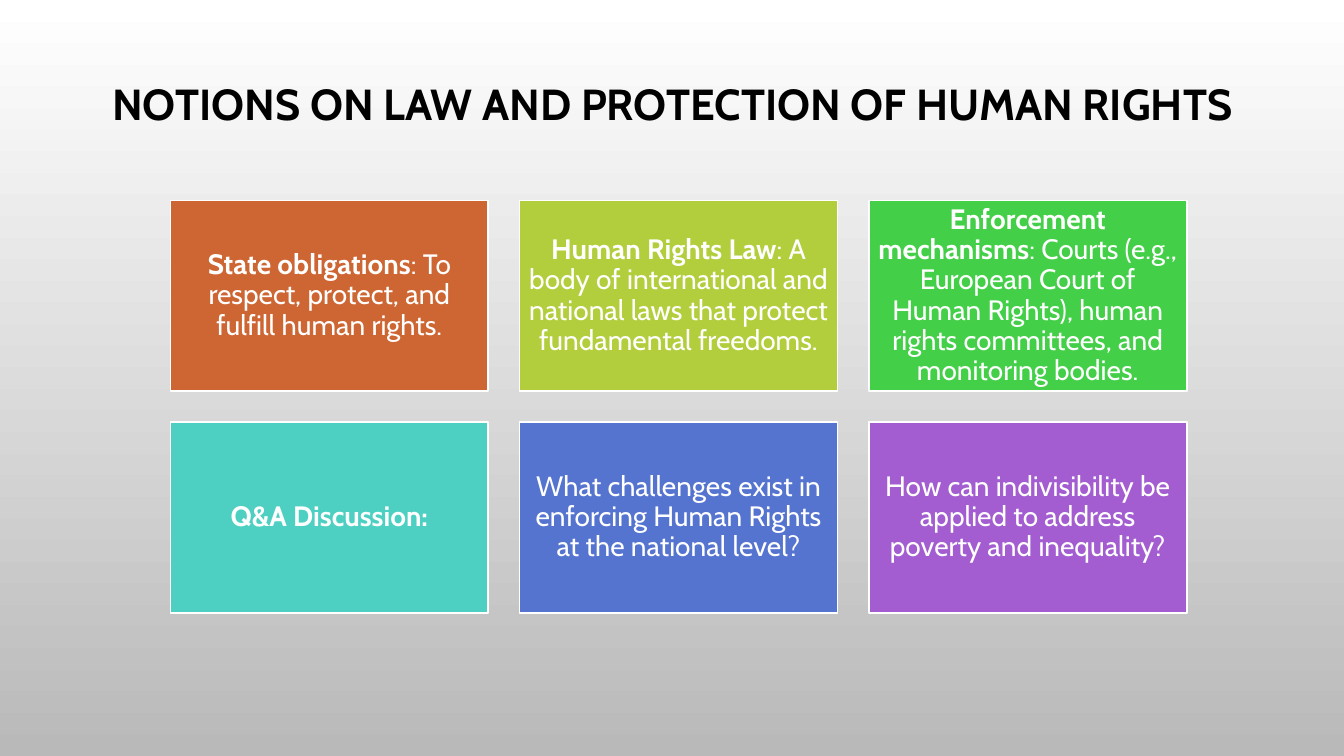
import pptx
import pptx.dml.color
import pptx.enum.shapes
import pptx.enum.text
import pptx.util

Inches = pptx.util.Inches
Pt = pptx.util.Pt

FONT = "Cabin"
COLORS = {
    "black": "000000",
    "white": "FFFFFF",
    "grey": "B9B9B9",
    "orange": "CE6633",
    "lime": "B3CE3C",
    "green": "44CF49",
    "teal": "4DD0C2",
    "blue": "5574D0",
    "purple": "A35DD1",
}
TITLE = "NOTIONS ON LAW AND PROTECTION OF HUMAN RIGHTS"
# Each card: colour, bold lead, plain text
CARDS = [
    ("orange", "State obligations", ": To respect, protect, and fulfill human rights."),
    ("lime", "Human Rights Law",
     ": A body of international and national laws that protect fundamental freedoms."),
    ("green", "Enforcement mechanisms",
     ": Courts (e.g., European Court of Human Rights), human rights committees, "
     "and monitoring bodies."),
    ("teal", "Q&A Discussion:", ""),
    ("blue", "", "What challenges exist in enforcing Human Rights at the national level?"),
    ("purple", "", "How can indivisibility be applied to address poverty and inequality?"),
]
COLUMNS = 3


def rgb(name):
    return pptx.dml.color.RGBColor.from_string(COLORS[name])


def write_centred(frame, pieces, size, color):
    """Fill a frame with one centred paragraph of (text, bold) pieces."""
    frame.word_wrap = True
    paragraph = frame.paragraphs[0]
    paragraph.alignment = pptx.enum.text.PP_ALIGN.CENTER
    paragraph.line_spacing = 0.9
    for text, bold in pieces:
        if text:
            run = paragraph.add_run()
            run.text = text
            run.font.name = FONT
            run.font.size = Pt(size)
            run.font.bold = bold
            run.font.color.rgb = rgb(color)


def paint_background(slide):
    fill = slide.background.fill
    fill.gradient()
    fill.gradient_angle = 270
    for stop, name in zip(fill.gradient_stops, ("white", "grey")):
        stop.color.rgb = rgb(name)


def add_title(slide, left, top, width, height):
    title = slide.shapes.add_textbox(
        Inches(left), Inches(top), Inches(width), Inches(height))
    title.text_frame.margin_top = Inches(0.14)
    title.text_frame.vertical_anchor = pptx.enum.text.MSO_ANCHOR.TOP
    write_centred(title.text_frame, [(TITLE, True)], 31, "black")


def add_card(slide, left, top, width, height, color, lead, body):
    card = slide.shapes.add_shape(
        pptx.enum.shapes.MSO_SHAPE.RECTANGLE,
        Inches(left), Inches(top), Inches(width), Inches(height))
    card.shadow.inherit = False
    card.fill.solid()
    card.fill.fore_color.rgb = rgb(color)
    card.line.color.rgb = rgb("white")
    card.line.width = Pt(1.25)
    frame = card.text_frame
    frame.margin_left = frame.margin_right = Inches(0.08)
    frame.margin_top = frame.margin_bottom = Inches(0.08)
    frame.vertical_anchor = pptx.enum.text.MSO_ANCHOR.MIDDLE
    write_centred(frame, [(lead, True), (body, False)], 20, "white")


def add_card_grid(slide, left, top, width, height, gap):
    rows = len(CARDS) // COLUMNS
    card_width = (width - gap * (COLUMNS - 1)) / COLUMNS
    card_height = (height - gap * (rows - 1)) / rows
    for index, card in enumerate(CARDS):
        row, column = divmod(index, COLUMNS)
        add_card(slide,
                 left + column * (card_width + gap),
                 top + row * (card_height + gap),
                 card_width, card_height, *card)


def main():
    deck = pptx.Presentation()
    deck.slide_width = Inches(13.33)
    deck.slide_height = Inches(7.5)
    slide = deck.slides.add_slide(deck.slide_layouts[6])
    paint_background(slide)
    add_title(slide, 1, 0.68, 11.33, 1.75)
    add_card_grid(slide, 1.69, 1.99, 10.08, 4.09, 0.31)
    deck.save("out.pptx")


if __name__ == "__main__":
    main()
